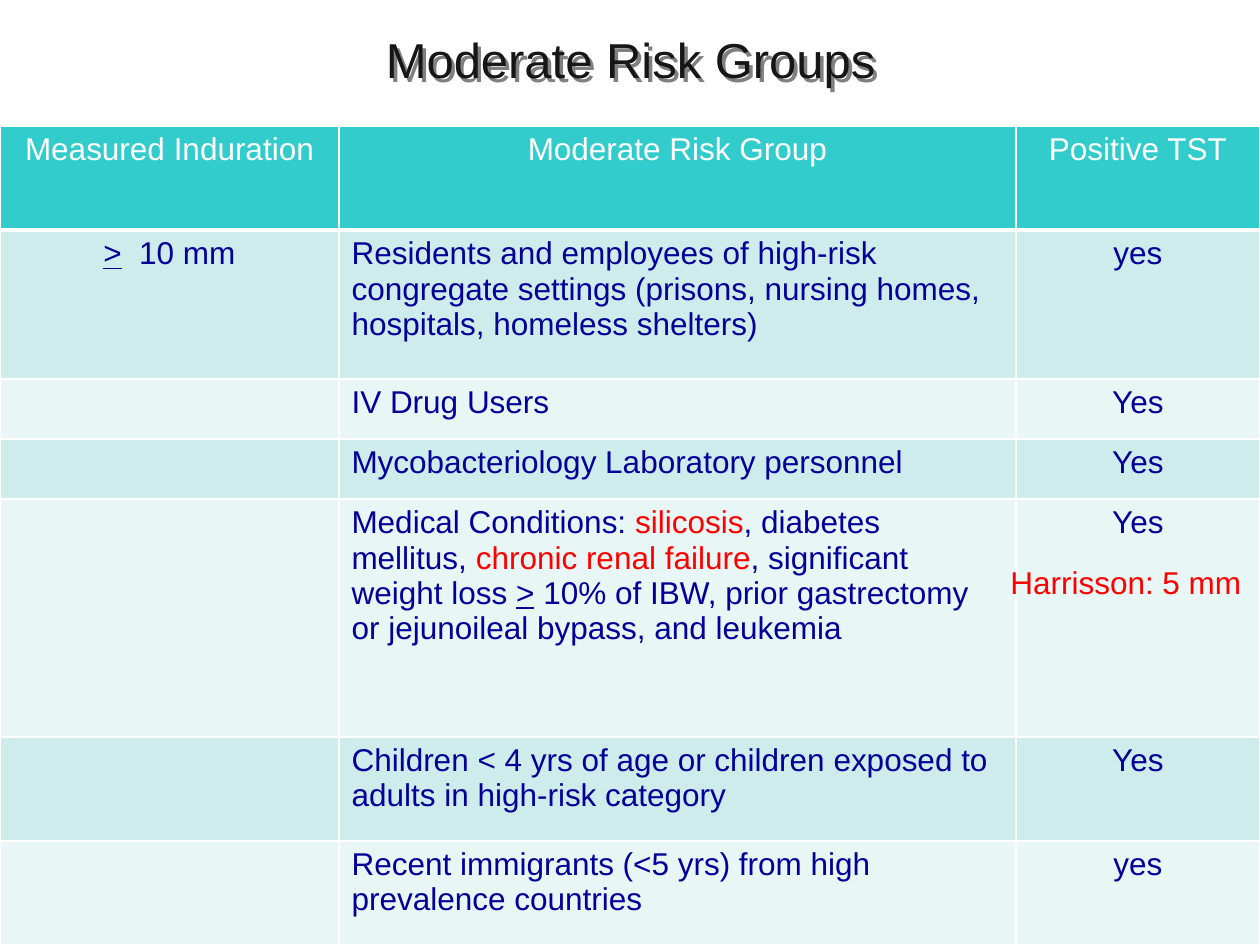
from dataclasses import dataclass

import pptx
import pptx.dml.color
import pptx.enum.text
import pptx.oxml
import pptx.oxml.ns
import pptx.util

EMU_PER_PX = 914400 / 126
ALIGN = pptx.enum.text.PP_ALIGN
ANCHOR = pptx.enum.text.MSO_ANCHOR


@dataclass(frozen=True)
class Theme:
    font: str = "Arial"
    title_size: int = 28
    body_size: int = 18
    title: str = "161616"
    title_shadow: str = "808080"
    header_text: str = "FFFFFF"
    body_text: str = "010199"
    highlight: str = "FF0000"
    header_fill: str = "33CCCC"
    band_fills: tuple[str, str] = ("CEECEC", "E8F6F6")
    border: str = "FFFFFF"
    border_width: int = 1
    header_rule_width: int = 3


@dataclass(frozen=True)
class Run:
    text: str
    color: str
    size: int
    underline: bool = False


@dataclass(frozen=True)
class Row:
    height: int
    cells: tuple[tuple[Run, ...], ...]


@dataclass(frozen=True)
class Label:
    left: int
    top: int
    width: int
    height: int
    run: Run
    align: ALIGN = ALIGN.LEFT
    line_spacing: float = 1.0
    top_inset: int = 6
    shadow: bool = False


THEME = Theme()


def body(text: str, color: str = THEME.body_text, underline: bool = False) -> Run:
    return Run(text, color, THEME.body_size, underline)


def header(text: str) -> tuple[Run, ...]:
    return (body(text, THEME.header_text),)


def risk_row(height: int, group: tuple[Run, ...], positive: str,
             induration: tuple[Run, ...] = ()) -> Row:
    return Row(height, (induration, group, (body(positive),)))


COLUMN_WIDTHS = (339, 677, 244)
COLUMN_ALIGNS = (ALIGN.CENTER, ALIGN.LEFT, ALIGN.CENTER)
TABLE_TOP = 126
ROWS = (
    Row(104, (header("Measured Induration"), header("Moderate Risk Group"),
              header("Positive TST"))),
    risk_row(149, (body("Residents and employees of high-risk congregate settings "
                        "(prisons, nursing homes, hospitals, homeless shelters)"),),
             "yes", (body(">", underline=True), body("  10 mm"))),
    risk_row(60, (body("IV Drug Users"),), "Yes"),
    risk_row(60, (body("Mycobacteriology Laboratory personnel"),), "Yes"),
    risk_row(238, (body("Medical Conditions: "),
                   body("silicosis", THEME.highlight),
                   body(", diabetes mellitus, "),
                   body("chronic renal failure", THEME.highlight),
                   body(", significant weight loss "),
                   body(">", underline=True),
                   body(" 10% of IBW, prior gastrectomy or jejunoileal bypass, "
                        "and leukemia")), "Yes"),
    risk_row(104, (body("Children < 4 yrs of age or children exposed to adults "
                        "in high-risk category"),), "Yes"),
    risk_row(104, (body("Recent immigrants (<5 yrs) from high prevalence countries"),),
             "yes"),
)
TITLE = Label(30, 18, 1201, 147,
              Run("Moderate Risk Groups", THEME.title, THEME.title_size),
              ALIGN.CENTER, 0.95, 16, True)
NOTE = Label(998, 557, 472, 50, body("Harrisson: 5 mm", THEME.highlight))


def px(length: int) -> pptx.util.Emu:
    return pptx.util.Emu(round(length * EMU_PER_PX))


def rgb(color: str) -> pptx.dml.color.RGBColor:
    return pptx.dml.color.RGBColor.from_string(color)


def add_run(paragraph, content: Run) -> None:
    run = paragraph.add_run()
    run.text = content.text
    run.font.name = THEME.font
    run.font.size = pptx.util.Pt(content.size)
    run.font.bold = False
    run.font.underline = content.underline
    run.font.color.rgb = rgb(content.color)


def add_text_shadow(shape) -> None:
    shape._element.spPr.append(pptx.oxml.parse_xml(
        f'<a:effectLst {pptx.oxml.ns.nsdecls("a")}>'
        '<a:outerShdw dist="36000" dir="2700000" algn="ctr" rotWithShape="0">'
        f'<a:srgbClr val="{THEME.title_shadow}"/></a:outerShdw></a:effectLst>'))


def add_label(slide, label: Label) -> None:
    shape = slide.shapes.add_textbox(
        px(label.left), px(label.top), px(label.width), px(label.height))
    frame = shape.text_frame
    frame.word_wrap = True
    frame.vertical_anchor = ANCHOR.TOP
    frame.margin_top = px(label.top_inset)
    paragraph = frame.paragraphs[0]
    paragraph.alignment = label.align
    paragraph.line_spacing = label.line_spacing
    add_run(paragraph, label.run)
    if label.shadow:
        add_text_shadow(shape)


def set_borders(cell, bottom_width: int) -> None:
    properties = cell._tc.get_or_add_tcPr()
    widths = {"L": THEME.border_width, "R": THEME.border_width,
              "T": THEME.border_width, "B": bottom_width}
    for index, (side, width) in enumerate(widths.items()):
        properties.insert(index, pptx.oxml.parse_xml(
            f'<a:ln{side} {pptx.oxml.ns.nsdecls("a")} w="{pptx.util.Pt(width)}">'
            f'<a:solidFill><a:srgbClr val="{THEME.border}"/></a:solidFill>'
            f'</a:ln{side}>'))


def add_risk_table(slide) -> None:
    table = slide.shapes.add_table(
        len(ROWS), len(COLUMN_WIDTHS), px(0), px(TABLE_TOP),
        px(sum(COLUMN_WIDTHS)), px(sum(row.height for row in ROWS))).table
    for column, width in zip(table.columns, COLUMN_WIDTHS):
        column.width = px(width)
    for row_index, row in enumerate(ROWS):
        table.rows[row_index].height = px(row.height)
        is_header = row_index == 0
        fill = THEME.header_fill if is_header else THEME.band_fills[(row_index - 1) % 2]
        rule = THEME.header_rule_width if is_header else THEME.border_width
        for column_index, runs in enumerate(row.cells):
            cell = table.cell(row_index, column_index)
            cell.fill.solid()
            cell.fill.fore_color.rgb = rgb(fill)
            set_borders(cell, rule)
            paragraph = cell.text_frame.paragraphs[0]
            paragraph.alignment = ALIGN.CENTER if is_header else COLUMN_ALIGNS[column_index]
            for run in runs:
                add_run(paragraph, run)


def main() -> None:
    presentation = pptx.Presentation()
    presentation.slide_width = px(1260)
    presentation.slide_height = px(945)
    slide = presentation.slides.add_slide(presentation.slide_layouts[6])
    add_label(slide, TITLE)
    add_risk_table(slide)
    add_label(slide, NOTE)
    presentation.save("out.pptx")


if __name__ == "__main__":
    main()
